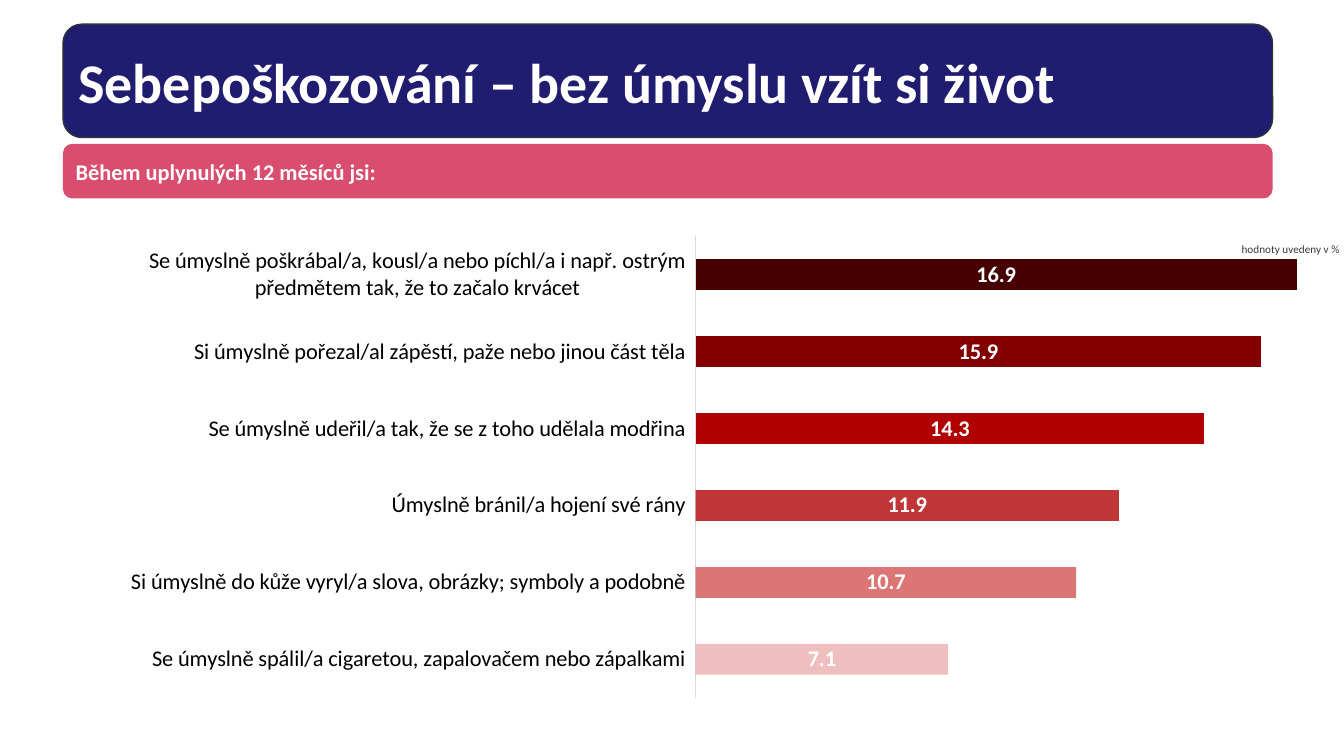
from dataclasses import dataclass

from lxml import etree
from pptx import Presentation
from pptx.chart.data import CategoryChartData
from pptx.dml.color import RGBColor
from pptx.enum.chart import XL_CHART_TYPE, XL_LABEL_POSITION, XL_TICK_LABEL_POSITION, XL_TICK_MARK
from pptx.enum.shapes import MSO_SHAPE
from pptx.enum.text import MSO_ANCHOR, PP_ALIGN
from pptx.oxml.ns import qn
from pptx.util import Pt

BAR_CLUSTERED = XL_CHART_TYPE.BAR_CLUSTERED
LABEL_CENTER = XL_LABEL_POSITION.CENTER
LABELS_LOW = XL_TICK_LABEL_POSITION.LOW
NO_TICK = XL_TICK_MARK.NONE
ROUNDED = MSO_SHAPE.ROUNDED_RECTANGLE
MIDDLE = MSO_ANCHOR.MIDDLE
LEFT = PP_ALIGN.LEFT

EMU_PER_PX = 9525
TITLE_ONLY = 5


@dataclass(frozen=True)
class Theme:
    font: str = "Calibri"
    navy: str = "201C70"
    outline: str = "303539"
    pink: str = "CD1240"
    red: str = "C00000"
    white: str = "FFFFFF"
    black: str = "000000"
    note: str = "3B3838"
    axis: str = "D9D9D9"
    title_size: int = 40
    body_size: int = 16
    chart_size: int = 10
    note_size: int = 8


THEME = Theme()

ANSWERS = [
    ("Se úmyslně spálil/a cigaretou, zapalovačem nebo zápalkami", 7.1, "C00000", 25),
    ("Si úmyslně do kůže vyryl/a slova, obrázky; symboly a podobně", 10.7, "C00000", 54),
    ("Úmyslně bránil/a hojení své rány", 11.9, "B00000", 79),
    ("Se úmyslně udeřil/a tak, že se z toho udělala modřina", 14.3, "B00000", 100),
    ("Si úmyslně pořezal/al zápěstí, paže nebo jinou část těla", 15.9, "820000", 100),
    ("Se úmyslně poškrábal/a, kousl/a nebo píchl/a i např. ostrým předmětem tak, "
     "že to začalo krvácet", 16.9, "460000", 100),
]
PLOT_AREA = {"x": 0.5, "y": 0.161, "w": 0.478, "h": 0.759}


def px(*lengths):
    return [length * EMU_PER_PX for length in lengths]


def style_font(font, size, color, bold=False):
    font.name = THEME.font
    font.size = Pt(size)
    font.bold = bold
    font.color.rgb = RGBColor.from_string(color)


def paint(fill, color):
    fill.solid()
    fill.fore_color.rgb = RGBColor.from_string(color)


def set_opacity(element, percent):
    color = element.find(".//" + qn("a:srgbClr"))
    etree.SubElement(color, qn("a:alpha"), val=str(percent * 1000))


def write_text(box, text, size, color, bold=False):
    frame = box.text_frame
    frame.word_wrap = True
    para = frame.paragraphs[0]
    para.text = text
    para.alignment = LEFT
    style_font(para.font, size, color, bold)
    return frame


def add_panel(page, place, color):
    panel = page.shapes.add_shape(ROUNDED, *px(*place))
    panel.shadow.inherit = False
    paint(panel.fill, color)
    panel.line.fill.background()
    return panel


def add_title(page, text):
    panel = add_panel(page, (60, 23, 1152, 108), THEME.navy)
    paint(panel.line.fill, THEME.outline)
    panel.line.width = Pt(1)
    title = page.shapes.title
    title.left, title.top, title.width, title.height = px(65, 23, 1142, 108)
    frame = write_text(title, text, THEME.title_size, THEME.white, True)
    frame.vertical_anchor = MIDDLE
    panel.element.addnext(title.element)


def add_banner(page, text):
    banner = add_panel(page, (60, 137, 1152, 52), THEME.pink)
    set_opacity(banner.element, 75)
    frame = write_text(banner, text, THEME.body_size, THEME.white, True)
    frame.vertical_anchor = MIDDLE


def add_note(page, text):
    box = page.shapes.add_textbox(*px(1173, 226, 116, 22))
    write_text(box, text, THEME.note_size, THEME.note)


def place_plot(chart):
    plot_area = chart.element.find(".//" + qn("c:plotArea"))
    for layout in plot_area.findall(qn("c:layout")):
        plot_area.remove(layout)
    layout = etree.Element(qn("c:layout"))
    manual = etree.SubElement(layout, qn("c:manualLayout"))
    settings = {"layoutTarget": "inner", "xMode": "edge", "yMode": "edge", **PLOT_AREA}
    for name, value in settings.items():
        etree.SubElement(manual, qn(f"c:{name}"), val=str(value))
    plot_area.insert(0, layout)


def style_axes(chart):
    categories = chart.category_axis
    categories.major_tick_mark = NO_TICK
    categories.minor_tick_mark = NO_TICK
    categories.tick_label_position = LABELS_LOW
    categories.has_major_gridlines = False
    paint(categories.format.line.fill, THEME.axis)
    categories.format.line.width = Pt(0.75)
    style_font(categories.tick_labels.font, THEME.body_size, THEME.black)
    values = chart.value_axis
    values.minimum_scale = 0
    values.maximum_scale = 17
    values.major_unit = 5
    values.has_major_gridlines = False
    values.visible = False


def style_bars(chart):
    plot = chart.plots[0]
    plot.gap_width = 150
    plot.vary_by_categories = False
    series = plot.series[0]
    paint(series.format.fill, THEME.red)
    for index, (_, _, color, _) in enumerate(ANSWERS):
        paint(series.points[index].format.fill, color)
    for point, (_, _, _, opacity) in zip(chart.element.iter(qn("c:dPt")), ANSWERS):
        if opacity < 100:
            set_opacity(point, opacity)
    labels = series.data_labels
    labels.show_value = True
    labels.position = LABEL_CENTER
    style_font(labels.font, THEME.body_size, THEME.white, True)


def add_answer_chart(page):
    data = CategoryChartData()
    data.categories = [answer for answer, _, _, _ in ANSWERS]
    data.add_series("Series 1", [value for _, value, _, _ in ANSWERS])
    chart = page.shapes.add_chart(BAR_CLUSTERED, *px(60, 132, 1205, 579), data).chart
    chart.has_legend = False
    chart.has_title = False
    style_font(chart.font, THEME.chart_size, THEME.black)
    place_plot(chart)
    style_axes(chart)
    style_bars(chart)


def main():
    deck = Presentation()
    deck.slide_width, deck.slide_height = px(1280, 720)
    page = deck.slides.add_slide(deck.slide_layouts[TITLE_ONLY])
    add_title(page, "Sebepoškozování – bez úmyslu vzít si život")
    add_answer_chart(page)
    add_note(page, "hodnoty uvedeny v %")
    add_banner(page, "Během uplynulých 12 měsíců jsi:")
    deck.save("out.pptx")


if __name__ == "__main__":
    main()
